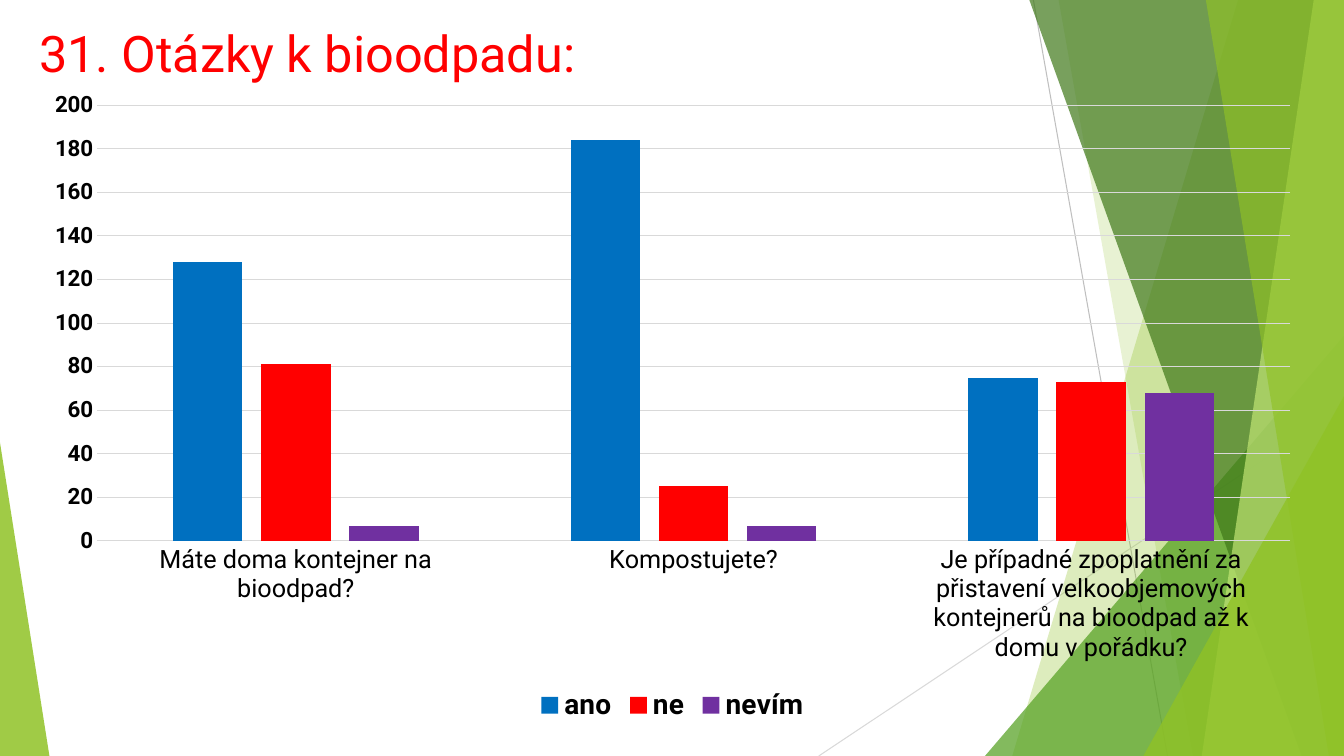
from lxml.etree import SubElement as Sub
from pptx import Presentation as Deck
from pptx.chart.data import CategoryChartData as Data
from pptx.dml.color import RGBColor as Color
from pptx.enum.chart import XL_CHART_TYPE as Kind
from pptx.enum.chart import XL_LEGEND_POSITION as Place
from pptx.enum.chart import XL_TICK_MARK as Tick
from pptx.enum.shapes import MSO_CONNECTOR as Link
from pptx.enum.shapes import MSO_SHAPE as Form
from pptx.enum.text import MSO_ANCHOR as Anchor
from pptx.oxml.ns import qn
from pptx.util import Inches, Pt

theme = {
    "font": "Roboto",
    "lime": "90C226", "green": "54A021", "dark": "3F7819", "pale": "C0E474",
    "rule": "BFBFBF", "grid": "D9D9D9", "ink": "000000", "head": "FF0000",
    "bars": ["0070C0", "FF0000", "7030A0"],
    "title": 36, "key": 20, "label": 18, "scale": 16, "base": 10,
}


def style(font, size, color=theme["ink"], bold=False):
    font.name = theme["font"]
    font.size = Pt(size)
    font.bold = bold
    font.color.rgb = Color.from_string(color)


def write(text, left, top, width, height, **look):
    box = slide.shapes.add_textbox(left, top, width, height)
    frame = box.text_frame
    frame.word_wrap = True
    frame.vertical_anchor = Anchor.TOP
    run = frame.paragraphs[0].add_run()
    run.text = text
    style(run.font, **look)


deck = Deck()
deck.slide_width, deck.slide_height = Inches(13.33), Inches(7.5)
wide, high = deck.slide_width, deck.slide_height
col, row = wide / 100, high / 100
slide = deck.slides.add_slide(deck.slide_layouts[6])

rays = [
    (76.89, 0, 86.87, 100, "rule"),
    (100, 53.73, 60.92, 100, "grid"),
]
for x1, y1, x2, y2, tint in rays:
    ray = slide.shapes.add_connector(
        Link.STRAIGHT, int(x1 * col), int(y1 * row), int(x2 * col), int(y2 * row))
    ray.line.width = Pt(0.75)
    ray.line.color.rgb = Color.from_string(theme[tint])
    Sub(ray.element.spPr, qn("a:effectLst"))

shards = [
    ("band", (92.12, 75.32), "lime", 30),
    ("band", (78.77, 88.75), "lime", 20),
    ("wedge", (73.29, 44.4, 26.71, 1), "green", 72),
    ("band", (76.59, 96.85), "dark", 70),
    ("band", (97.75, 89.42), "pale", 70),
    ("band", (89.72, 98.87), "lime", 65),
    ("wedge", (85.07, 52.4, 14.93, 1), "lime", 80),
    ("wedge", (0, 58.53, 3.68, 0), "lime", 85),
]
for sort, spots, tint, share in shards:
    if sort == "band":
        head, foot = (int(spot * col) for spot in spots)
        path = slide.shapes.build_freeform(head, 0)
        path.add_line_segments([(wide, 0), (wide, high), (foot, high)])
        shard = path.convert_to_shape()
    else:
        left, top, span, tip = spots
        shard = slide.shapes.add_shape(
            Form.ISOSCELES_TRIANGLE, int(left * col), int(top * row),
            int(span * col), int((100 - top) * row))
        shard.adjustments[0] = tip
    shard.shadow.inherit = False
    shard.line.fill.background()
    shard.fill.solid()
    shard.fill.fore_color.rgb = Color.from_string(theme[tint])
    Sub(shard.element.spPr.find(qn("a:solidFill"))[0], qn("a:alpha"),
        val=str(share * 1000))

edge, span = int(2.18 * col), int(95.72 * col)
write("31. Otázky k bioodpadu:", edge, int(2.27 * row), span, int(12 * row),
      size=theme["title"], color=theme["head"])

data = Data()
data.categories = [
    "Máte doma kontejner na bioodpad?",
    "Kompostujete?",
    "Je případné zpoplatnění za přistavení velkoobjemových kontejnerů "
    "na bioodpad až k domu v pořádku?",
]
data.add_series("ano", (128, 184, 75))
data.add_series("ne", (81, 25, 73))
data.add_series("nevím", (7, 7, 68))
chart = slide.shapes.add_chart(
    Kind.COLUMN_CLUSTERED, edge, int(10.53 * row), span, int(85.73 * row), data).chart
style(chart.font, theme["base"])
chart.has_title = False
chart.has_legend = True
chart.legend.position = Place.BOTTOM
chart.legend.include_in_layout = False
style(chart.legend.font, theme["key"], bold=True)

plot = chart.plots[0]
plot.gap_width, plot.overlap = 219, -27
plot.vary_by_categories = False
for bar, tint in zip(plot.series, theme["bars"]):
    bar.format.fill.solid()
    bar.format.fill.fore_color.rgb = Color.from_string(tint)

base, scale = chart.category_axis, chart.value_axis
style(base.tick_labels.font, theme["label"])
style(scale.tick_labels.font, theme["scale"], bold=True)
for axis in (base, scale):
    axis.major_tick_mark = axis.minor_tick_mark = Tick.NONE
scale.minimum_scale, scale.maximum_scale, scale.major_unit = 0, 200, 20
scale.format.line.fill.background()
for line in (base.format.line, scale.major_gridlines.format.line):
    line.width = Pt(0.75)
    line.color.rgb = Color.from_string(theme["grid"])

deck.save("out.pptx")
